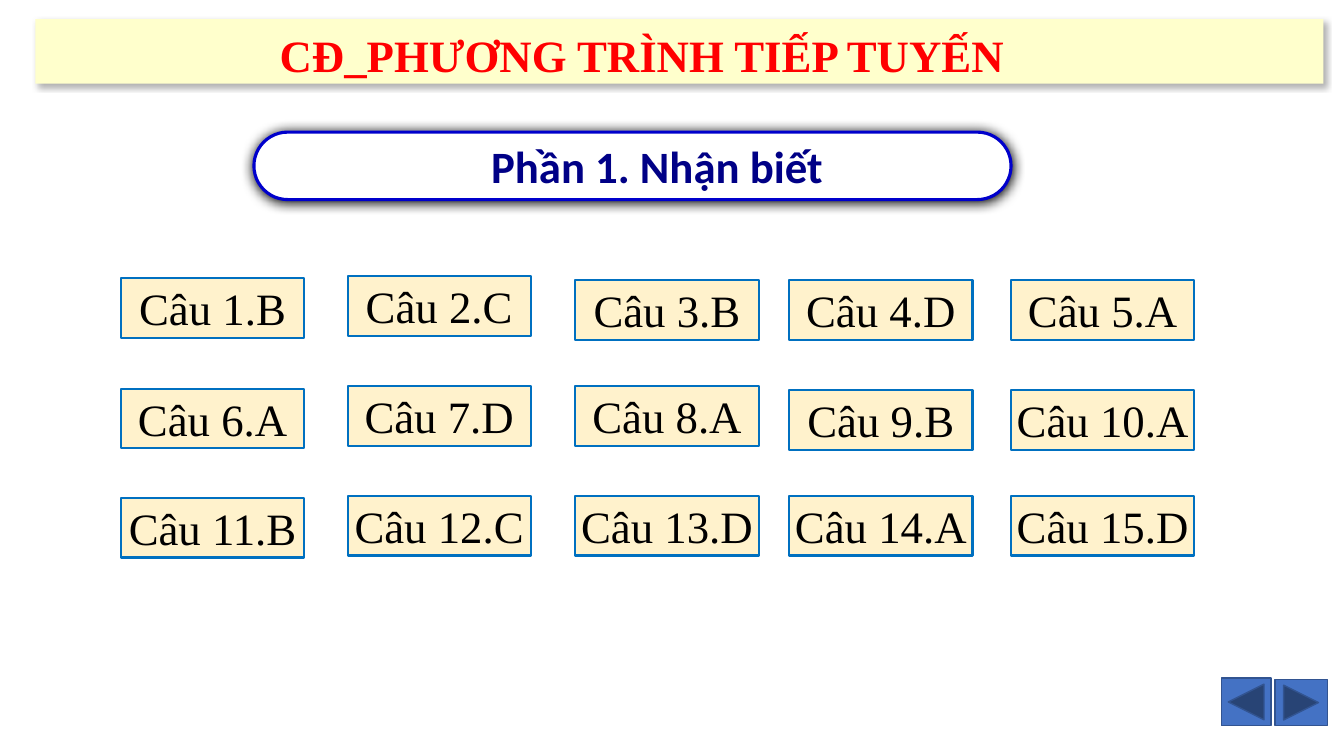
import pptx
import pptx.util
import pptx.dml.color
import pptx.enum.shapes
import pptx.enum.text
import pptx.oxml.ns
import lxml.etree

Cm = pptx.util.Cm
Pt = pptx.util.Pt
SHAPES = pptx.enum.shapes.MSO_SHAPE
ANCHOR = pptx.enum.text.MSO_ANCHOR
COLORS = {
    "title": "FF0000", "banner": "FFFFCC", "section": "000086",
    "section_line": "0000CC", "white": "FFFFFF", "black": "000000",
    "answer": "FFF2CC", "answer_line": "0070C0",
    "button": "4472C4", "button_line": "325491",
}
SERIF = "Times New Roman"
ANSWERS = "BCBDAADABABCDAD"
COLUMN_LEFTS = [3.05, 8.76, 14.5, 19.89, 25.48]
ROW_TOPS = [
    [7.01, 6.96, 7.06, 7.06, 7.06],
    [9.8, 9.73, 9.73, 9.83, 9.83],
    [12.55, 12.5, 12.5, 12.5, 12.5],
]


def rgb(name):
    return pptx.dml.color.RGBColor.from_string(COLORS[name])


def apply(target, values):
    for name, value in values.items():
        setattr(target, name, value)


def place(box, left, top, width, height):
    apply(box, {"left": Cm(left), "top": Cm(top),
                "width": Cm(width), "height": Cm(height)})


def add_box(page, kind, area, fill, line=None, weight=1):
    box = page.shapes.add_shape(kind, *[Cm(length) for length in area])
    box.shadow.inherit = False
    box.fill.solid()
    box.fill.fore_color.rgb = rgb(fill)
    if line:
        box.line.color.rgb = rgb(line)
        box.line.width = Pt(weight)
    else:
        box.line.fill.background()
    return box


def write(box, text, color, font=SERIF, bold=False, anchor=ANCHOR.TOP, left=0.13):
    frame = box.text_frame
    apply(frame, {
        "word_wrap": True, "vertical_anchor": anchor,
        "auto_size": pptx.enum.text.MSO_AUTO_SIZE.NONE,
        "margin_left": Cm(left), "margin_right": Cm(0.13),
        "margin_top": Cm(0.06), "margin_bottom": Cm(0.06),
    })
    para = frame.paragraphs[0]
    para.alignment = pptx.enum.text.PP_ALIGN.CENTER
    span = para.add_run()
    span.text = text
    apply(span.font, {"name": font, "size": Pt(32), "bold": bold})
    span.font.color.rgb = rgb(color)


def add_shadow(box, opacity, blur, distance, angle):
    qn = pptx.oxml.ns.qn
    effects = box.element.spPr.find(qn("a:effectLst"))
    shadow = lxml.etree.SubElement(effects, qn("a:outerShdw"), {
        "blurRad": str(Pt(blur)), "dist": str(Pt(distance)),
        "dir": str(angle * 60000), "algn": "ctr", "rotWithShape": "0"})
    color = lxml.etree.SubElement(shadow, qn("a:srgbClr"), val=COLORS["black"])
    lxml.etree.SubElement(color, qn("a:alpha"), val=str(opacity * 1000))


def add_section(page, text):
    box = add_box(page, SHAPES.ROUNDED_RECTANGLE, (6.4, 3.33, 19.08, 1.7),
                  "white", "section_line", 2.25)
    box.adjustments[0] = 0.5
    add_shadow(box, 100, 8.5, 1, 90)
    write(box, text, "section", "Calibri", True, ANCHOR.MIDDLE, left=1.37)


def add_answers(page):
    for index, letter in enumerate(ANSWERS):
        row, column = divmod(index, len(COLUMN_LEFTS))
        area = (COLUMN_LEFTS[column], ROW_TOPS[row][column], 4.62, 1.5)
        box = add_box(page, SHAPES.RECTANGLE, area, "answer", "answer_line", 1.5)
        write(box, f"Câu {index + 1}.{letter}", "black")


def add_buttons(page):
    buttons = [
        (SHAPES.ACTION_BUTTON_BACK_OR_PREVIOUS, (30.78, 17.09, 1.25, 1.2)),
        (SHAPES.ACTION_BUTTON_FORWARD_OR_NEXT, (32.13, 17.12, 1.32, 1.17)),
    ]
    for kind, area in buttons:
        add_box(page, kind, area, "button", "button_line")


def add_title(page, text):
    banner = add_box(page, SHAPES.RECTANGLE, (0.89, 0.48, 32.46, 1.63), "banner")
    add_shadow(banner, 30, 4.5, 2.6, 53)
    title = page.shapes.title
    place(title, 0.84, 0.64, 30.68, 1.5)
    write(title, text, "title", bold=True)
    title.element.getparent().append(title.element)


def main():
    deck = pptx.Presentation()
    apply(deck, {"slide_width": Cm(33.87), "slide_height": Cm(19.05)})
    page = deck.slides.add_slide(deck.slide_layouts[5])
    add_section(page, "Phần 1. Nhận biết")
    add_answers(page)
    add_buttons(page)
    add_title(page, "CĐ_PHƯƠNG TRÌNH TIẾP TUYẾN")
    deck.save("out.pptx")


if __name__ == "__main__":
    main()
